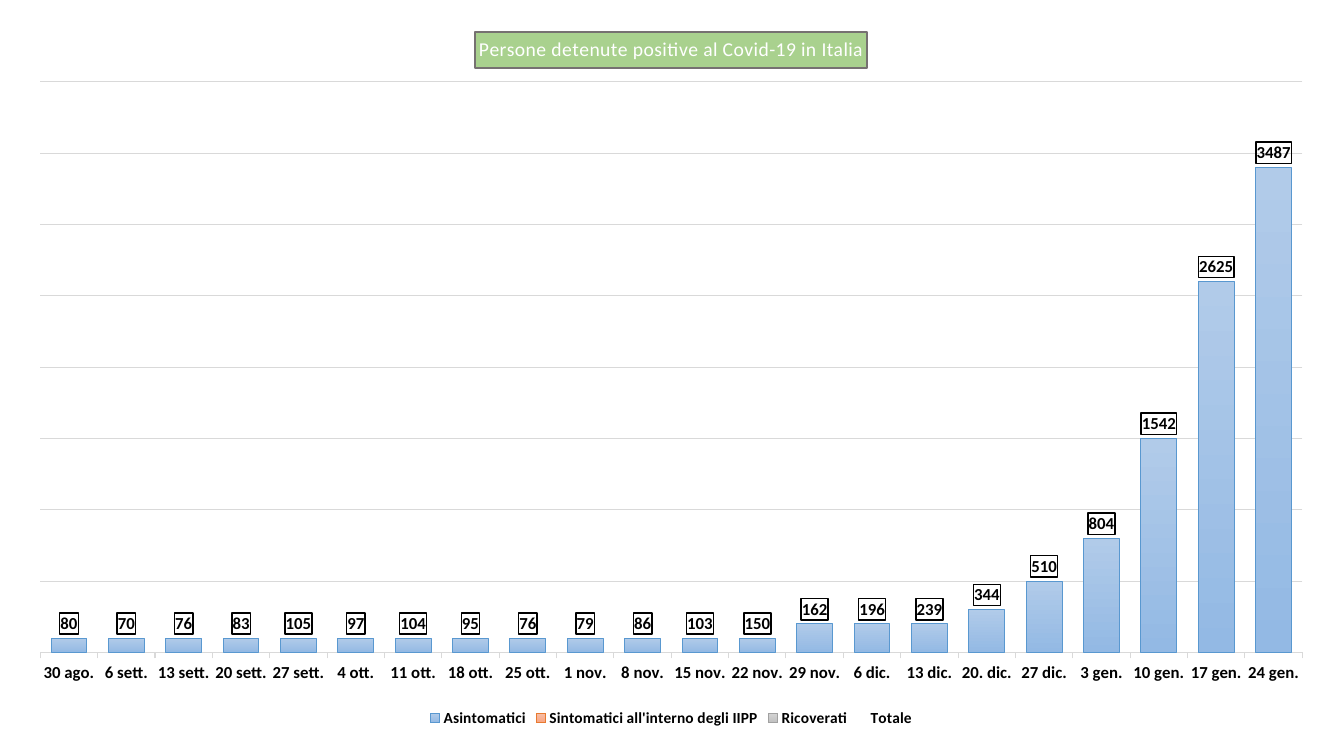
from pptx import Presentation
from pptx.chart.data import CategoryChartData
from pptx.dml.color import RGBColor
from pptx.enum.chart import (XL_CHART_TYPE, XL_LABEL_POSITION, XL_LEGEND_POSITION,
                             XL_TICK_LABEL_POSITION, XL_TICK_MARK)
from pptx.oxml import parse_xml
from pptx.oxml.ns import nsdecls
from pptx.util import Pt

# Content
TITLE = "Persone detenute positive al Covid-19 in Italia"
# Date, without symptoms (in round hundreds), total
WEEKS = [
    ("30 ago.", 100, 80), ("6 sett.", 100, 70), ("13 sett.", 100, 76),
    ("20 sett.", 100, 83), ("27 sett.", 100, 105), ("4 ott.", 100, 97),
    ("11 ott.", 100, 104), ("18 ott.", 100, 95), ("25 ott.", 100, 76),
    ("1 nov.", 100, 79), ("8 nov.", 100, 86), ("15 nov.", 100, 103),
    ("22 nov.", 100, 150), ("29 nov.", 200, 162), ("6 dic.", 200, 196),
    ("13 dic.", 200, 239), ("20. dic.", 300, 344), ("27 dic.", 500, 510),
    ("3 gen.", 800, 804), ("10 gen.", 1500, 1542), ("17 gen.", 2600, 2625),
    ("24 gen.", 3400, 3487),
]
# Name, gradient top, gradient bottom, outline
GROUPS = [
    ("Asintomatici", "B1CBE9", "93B9E4", "5998D0"),
    ("Sintomatici all'interno degli IIPP", "F7BDA5", "F8A582", "E87A30"),
    ("Ricoverati", "D2D2D2", "C0C0C0", "A1A1A1"),
]
TOTAL_NAME = "Totale"

# Formats
TITLE_FONT = {"name": "Calibri", "size": Pt(14), "bold": False}
AXIS_FONT = {"name": "Calibri", "size": Pt(12), "bold": True}
LEGEND_FONT = {"name": "Calibri", "size": Pt(11), "bold": True}
PLOT_AREA = {"x": 0.02, "y": 0.097, "w": 0.96, "h": 0.793}
VALUE_AXIS = {"minimum_scale": 0, "maximum_scale": 4000, "major_unit": 500,
              "has_major_gridlines": True, "major_tick_mark": XL_TICK_MARK.NONE,
              "tick_label_position": XL_TICK_LABEL_POSITION.NONE}
LABELS = {"show_value": True, "position": XL_LABEL_POSITION.INSIDE_BASE}


def color(hex_string):
    return RGBColor.from_string(hex_string)


def apply(target, values):
    for key, value in values.items():
        setattr(target, key, value)


def style_font(font, values, hex_string):
    apply(font, values)
    font.color.rgb = color(hex_string)


def style_line(line, hex_string, width=0.75):
    line.color.rgb = color(hex_string)
    line.width = Pt(width)


deck = Presentation()
deck.slide_width, deck.slide_height = Pt(960), Pt(540)
slide = deck.slides.add_slide(deck.slide_layouts[6])

# Data: the two smaller groups round to zero hundreds
dates, asymptomatic, totals = zip(*WEEKS)
few = [0] * len(WEEKS)
cases = CategoryChartData()
cases.categories = dates
names = [group[0] for group in GROUPS] + [TOTAL_NAME]
for name, counts in zip(names, (asymptomatic, few, few, totals)):
    cases.add_series(name, counts)

chart = slide.shapes.add_chart(XL_CHART_TYPE.COLUMN_STACKED, Pt(10), Pt(8.6),
                               Pt(939), Pt(514), cases).chart
style_font(chart.font, {"name": "Calibri", "size": Pt(10)}, "000000")

# Title in a green box, slightly letter-spaced
chart.has_title = True
heading = chart.chart_title
heading.text_frame.text = TITLE
heading_font = heading.text_frame.paragraphs[0].runs[0].font
style_font(heading_font, TITLE_FONT, "FFFFFF")
heading_font._element.set("spc", "20")
heading.format.fill.solid()
heading.format.fill.fore_color.rgb = color("A9D18E")
style_line(heading.format.line, "767171", 1.5)
heading.include_in_layout = False

# Legend
chart.has_legend = True
apply(chart.legend, {"position": XL_LEGEND_POSITION.BOTTOM, "include_in_layout": False})
style_font(chart.legend.font, LEGEND_FONT, "000000")

# Axes
date_axis, count_axis = chart.category_axis, chart.value_axis
date_axis.major_tick_mark = XL_TICK_MARK.OUTSIDE
style_font(date_axis.tick_labels.font, AXIS_FONT, "000000")
style_line(date_axis.format.line, "D9D9D9")
apply(count_axis, VALUE_AXIS)
count_axis.format.line.fill.background()
style_line(count_axis.major_gridlines.format.line, "D9D9D9")

# Columns
columns = chart.plots[0]
apply(columns, {"gap_width": 60, "overlap": 100, "vary_by_categories": False})
*parts, total = columns.series
for part, (_, top, bottom, outline) in zip(parts, GROUPS):
    fill = part.format.fill
    fill.gradient()
    fill.gradient_angle = 270
    for stop, shade in zip(fill.gradient_stops, (top, bottom)):
        stop.color.rgb = color(shade)
    style_line(part.format.line, outline)

# Boxed totals sit at the base of an unfilled column
total.format.fill.background()
total.format.line.fill.background()
labels = total.data_labels
apply(labels, LABELS)
style_font(labels.font, AXIS_FONT, "000000")
box = parse_xml(f'<c:spPr {nsdecls("c", "a")}><a:noFill/><a:ln w="12700"><a:solidFill>'
                '<a:srgbClr val="000000"/></a:solidFill></a:ln></c:spPr>')
labels._element.find("{*}txPr").addprevious(box)

# Plot area placement
plot_area = chart._chartSpace.chart.plotArea
for old_layout in plot_area.findall("{*}layout"):
    plot_area.remove(old_layout)
sides = "".join(f'<c:{side} val="{share}"/>' for side, share in PLOT_AREA.items())
plot_area.insert(0, parse_xml(
    f'<c:layout {nsdecls("c")}><c:manualLayout><c:layoutTarget val="inner"/>'
    f'<c:xMode val="edge"/><c:yMode val="edge"/>{sides}</c:manualLayout></c:layout>'))

deck.save("out.pptx")
